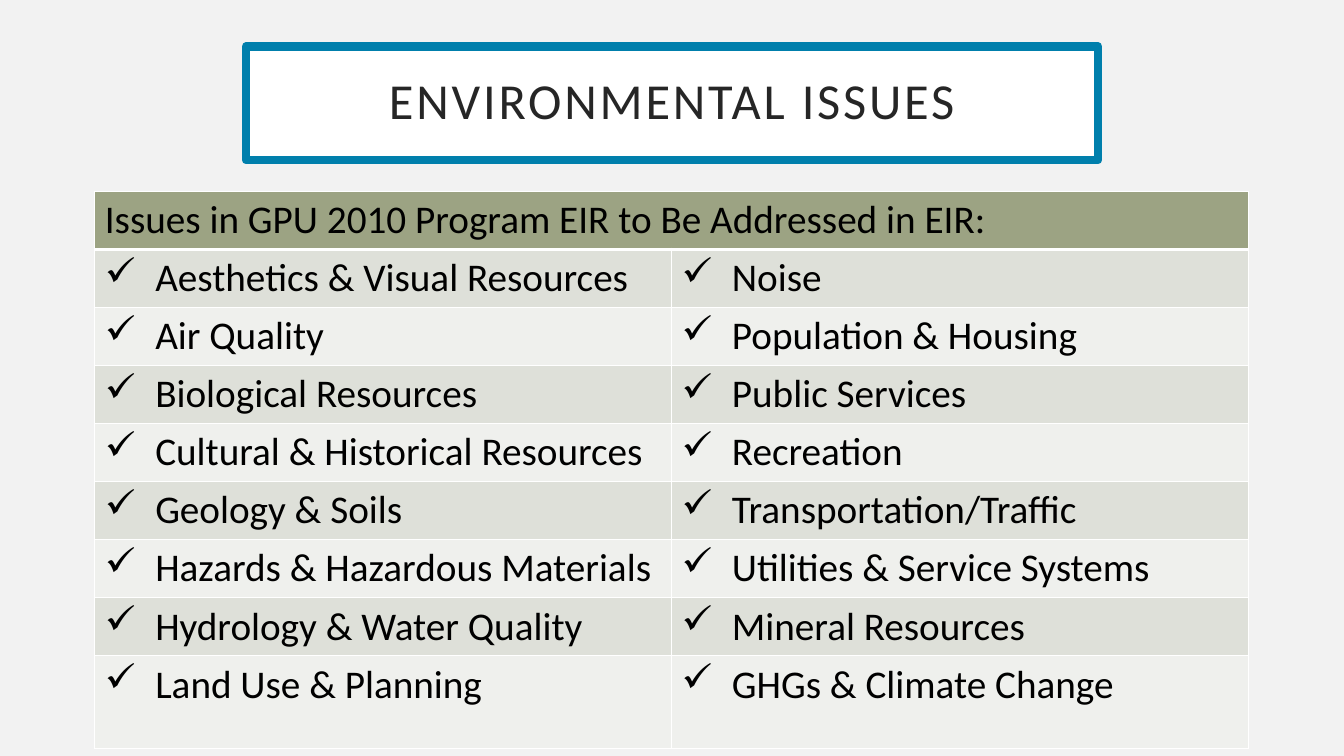
from lxml import etree
from pptx import Presentation, util as u
from pptx.dml.color import RGBColor
from pptx.enum import shapes, text
from pptx.oxml import ns

PX = 9144
BACKGROUND = RGBColor(0xF2, 0xF2, 0xF2)
WHITE = RGBColor(0xFF, 0xFF, 0xFF)
BLACK = RGBColor(0x00, 0x00, 0x00)
CHARCOAL = RGBColor(0x26, 0x26, 0x26)
BLUE = RGBColor(0x00, 0x7F, 0xAC)
OLIVE = RGBColor(0x9C, 0xA3, 0x83)
BANDS = [RGBColor(0xEF, 0xF0, 0xED), RGBColor(0xDE, 0xE0, 0xD9)]

HEADING = "Issues in GPU 2010 Program EIR to Be Addressed in EIR:"
ISSUES = [
    ("Aesthetics & Visual Resources", "Noise"),
    ("Air Quality", "Population & Housing"),
    ("Biological Resources", "Public Services"),
    ("Cultural & Historical Resources", "Recreation"),
    ("Geology & Soils", "Transportation/Traffic"),
    ("Hazards & Hazardous Materials", "Utilities & Service Systems"),
    ("Hydrology & Water Quality", "Mineral Resources"),
    ("Land Use & Planning", "GHGs & Climate Change"),
]


def add_run(paragraph, wording, size, color):
    run = paragraph.add_run()
    run.text = wording
    run.font.name = "Calibri"
    run.font.size = u.Pt(size)
    run.font.bold = False
    run.font.color.rgb = color
    return run


def style_cell(cell, color, top, bottom):
    properties = cell._tc.get_or_add_tcPr()
    for side, points in (("L", 1), ("R", 1), ("T", top), ("B", bottom)):
        border = etree.SubElement(properties, ns.qn(f"a:ln{side}"), w=str(u.Pt(points)))
        fill = etree.SubElement(border, ns.qn("a:solidFill"))
        etree.SubElement(fill, ns.qn("a:srgbClr"), val=str(WHITE))
    cell.fill.solid()
    cell.fill.fore_color.rgb = color


presentation = Presentation()
presentation.slide_width = 1333 * PX
presentation.slide_height = 750 * PX
slide = presentation.slides.add_slide(presentation.slide_layouts[6])
slide.background.fill.solid()
slide.background.fill.fore_color.rgb = BACKGROUND

title = slide.shapes.add_shape(
    shapes.MSO_SHAPE.RECTANGLE, 244 * PX, 46 * PX, 845 * PX, 113 * PX)
title.shadow.inherit = False
title.fill.solid()
title.fill.fore_color.rgb = WHITE
title.line.color.rgb = BLUE
title.line.width = u.Pt(6)
frame = title.text_frame
frame.word_wrap = True
frame.vertical_anchor = text.MSO_ANCHOR.MIDDLE
frame.margin_left = frame.margin_right = 20 * PX
frame.margin_top = frame.margin_bottom = 20 * PX
paragraph = frame.paragraphs[0]
paragraph.alignment = text.PP_ALIGN.CENTER
paragraph.line_spacing = 0.9
run = add_run(paragraph, "ENVIRONMENTAL ISSUES", 36, CHARCOAL)
run.font._element.set("spc", "200")

table = slide.shapes.add_table(
    len(ISSUES) + 1, 2, 94 * PX, 190 * PX, 1144 * PX, 532 * PX).table
for column in table.columns:
    column.width = 572 * PX
for row in table.rows:
    row.height = 55 * PX
table.rows[len(ISSUES)].height = 92 * PX

table.cell(0, 0).merge(table.cell(0, 1))
for cell in table.rows[0].cells:
    style_cell(cell, OLIVE, 1, 3)
add_run(table.cell(0, 0).text_frame.paragraphs[0], HEADING, 28, BLACK)

for number, pair in enumerate(ISSUES, start=1):
    for side, issue in enumerate(pair):
        cell = table.cell(number, side)
        style_cell(cell, BANDS[number % 2], 3 if number == 1 else 1, 1)
        paragraph = cell.text_frame.paragraphs[0]
        add_run(paragraph, issue, 28, BLACK)
        properties = paragraph._p.get_or_add_pPr()
        properties.set("marL", str(50 * PX))
        properties.set("indent", str(-50 * PX))
        etree.SubElement(properties, ns.qn("a:buChar"), char="✓")

presentation.save("out.pptx")
